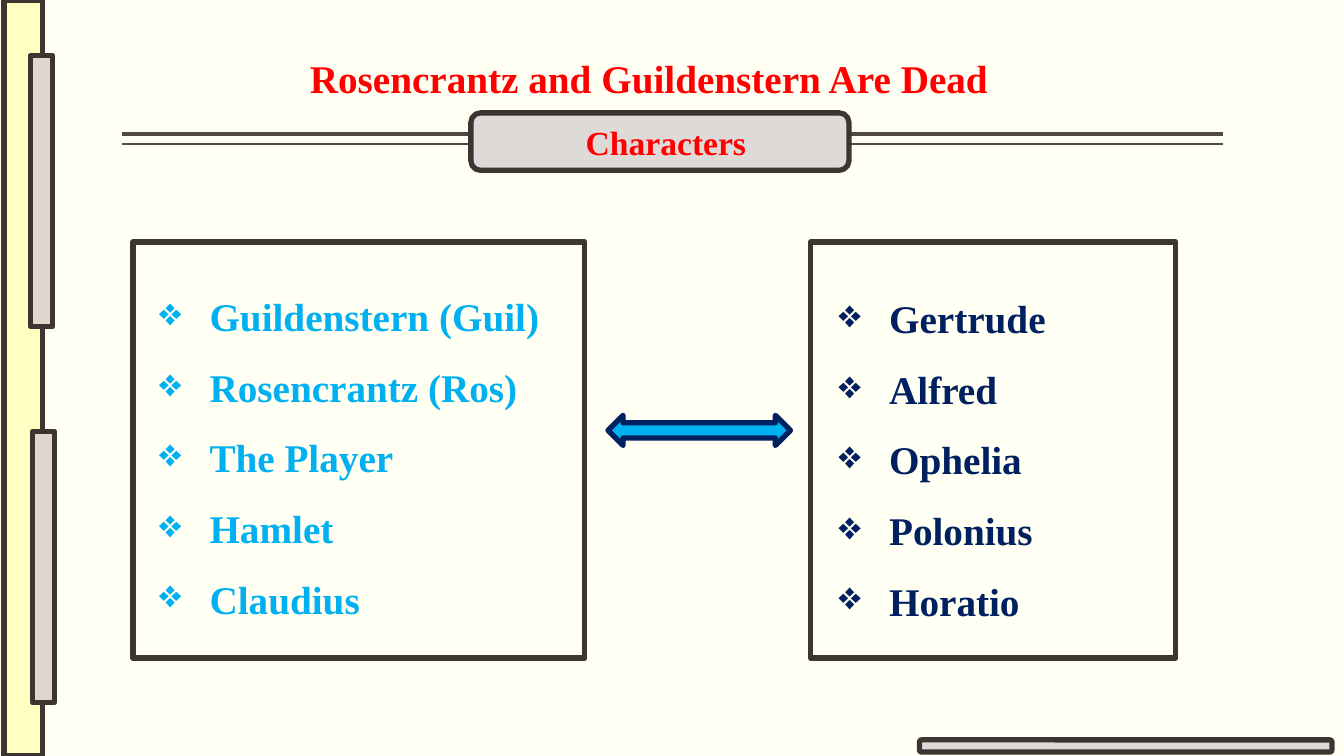
from typing import NamedTuple

from pptx import Presentation
from pptx import util as u
from pptx.dml.color import RGBColor
from pptx.enum import shapes as sh
from pptx.enum import text as tx
from pptx.oxml.ns import qn

INK = RGBColor(0x3C, 0x35, 0x32)
RULE = RGBColor(0x51, 0x48, 0x43)
CREAM = RGBColor(0xFF, 0xFF, 0xF3)
YELLOW = RGBColor(0xFF, 0xFF, 0xC1)
SAND = RGBColor(0xDF, 0xD7, 0xCB)
GREY = RGBColor(0xDE, 0xDA, 0xD7)
SKY = RGBColor(0x00, 0xB0, 0xF0)
NAVY = RGBColor(0x00, 0x20, 0x60)
RED = RGBColor(0xFF, 0x00, 0x00)

FONT = "Times New Roman"
COLS, ROWS = 133.3, 75  # the slide's grid
CELL = u.Inches(0.1)

RECT = sh.MSO_SHAPE.RECTANGLE
ROUND = sh.MSO_SHAPE.ROUNDED_RECTANGLE
ARROW = sh.MSO_SHAPE.LEFT_RIGHT_ARROW


class Area(NamedTuple):
    """Left, top, width and height in grid columns and rows."""
    col: float
    row: float
    wide: float
    high: float


class Block(NamedTuple):
    area: Area
    fill: RGBColor
    kind: sh.MSO_SHAPE = RECT
    edge: RGBColor = INK


class Cast(NamedTuple):
    area: Area
    color: RGBColor
    wrap: bool
    names: list[str]


def grid(n: float) -> int:
    return round(n * CELL)


def draw(slide, block: Block) -> None:
    shape = slide.shapes.add_shape(block.kind, *map(grid, block.area))
    shape.shadow.inherit = False
    shape.fill.solid()
    shape.fill.fore_color.rgb = block.fill
    shape.line.color.rgb = block.edge
    shape.line.width = u.Pt(3.78)


def rule(slide, row: float, width: float) -> None:
    line = slide.shapes.add_connector(
        sh.MSO_CONNECTOR.STRAIGHT, grid(121.3), grid(row), grid(12.1), grid(row))
    line.line.color.rgb = RULE
    line.line.width = u.Pt(width)
    props = line._element.spPr
    props.append(props.makeelement(qn("a:effectLst"), {}))


def style(frame, size: float, color: RGBColor, wrap: bool = True) -> None:
    frame.word_wrap = wrap
    frame.auto_size = tx.MSO_AUTO_SIZE.SHAPE_TO_FIT_TEXT
    frame.vertical_anchor = tx.MSO_ANCHOR.TOP
    for para in frame.paragraphs:
        for run in para.runs:
            run.font.name = FONT
            run.font.size = u.Pt(size)
            run.font.bold = True
            run.font.color.rgb = color


def write(slide, area: Area, words: str, size: float, color: RGBColor, wrap: bool):
    frame = slide.shapes.add_textbox(*map(grid, area)).text_frame
    frame.text = words
    style(frame, size, color, wrap)
    return frame


def bullet(para) -> None:
    para.line_spacing = 1.5
    props = para._p.get_or_add_pPr()
    props.set("marL", str(grid(5)))
    props.set("indent", str(-grid(5)))
    props.append(props.makeelement(qn("a:buChar"), {"char": "❖"}))


BLOCKS = [
    # Side band with its two tabs, and the foot bar
    Block(Area(0.4, 0, 3.8, ROWS), YELLOW),
    Block(Area(3, 5.5, 2.2, 26.9), SAND),
    Block(Area(3.2, 42.8, 2.2, 26.9), SAND),
    Block(Area(91.2, 73.4, 40.9, 1.2), GREY, ROUND),
    # Two panels and the arrow between them
    Block(Area(13.2, 24, 44.8, 41.3), CREAM),
    Block(Area(80.4, 24, 36.2, 41.3), CREAM),
    Block(Area(60.3, 41.2, 18.1, 3), SKY, ARROW, NAVY),
    # Badge on the rules
    Block(Area(46.7, 11.2, 37.5, 5.7), GREY, ROUND),
]

CASTS = [
    Cast(Area(14.8, 26.2, 40.1, 39.4), SKY, False,
         ["Guildenstern (Guil)", "Rosencrantz (Ros)", "The Player",
          "Hamlet", "Claudius"]),
    Cast(Area(82.2, 26.4, 25.9, 39.4), NAVY, True,
         ["Gertrude", "Alfred", "Ophelia", "Polonius", "Horatio"]),
]


def main() -> None:
    deck = Presentation()
    deck.slide_width, deck.slide_height = grid(COLS), grid(ROWS)
    slide = deck.slides.add_slide(deck.slide_layouts[5])
    slide.background.fill.solid()
    slide.background.fill.fore_color.rgb = CREAM

    # Title
    title = slide.shapes.title
    title.left, title.top, title.width, title.height = map(
        grid, Area(28.7, 4.9, 71.3, 5.7))
    title.text_frame.text = "Rosencrantz and Guildenstern Are Dead"
    title.text_frame.paragraphs[0].alignment = tx.PP_ALIGN.CENTER
    style(title.text_frame, 28, RED)

    # Double rule, then the blocks over it
    rule(slide, 13.3, 3)
    rule(slide, 14.3, 1)
    for block in BLOCKS:
        draw(slide, block)

    # Badge label and lists of names
    write(slide, Area(57.1, 11.6, 18.1, 5), "Characters", 24, RED, False)
    for cast in CASTS:
        frame = write(slide, cast.area, "\n".join(cast.names), 28,
                      cast.color, cast.wrap)
        for para in frame.paragraphs:
            bullet(para)

    deck.save("out.pptx")


if __name__ == "__main__":
    main()
